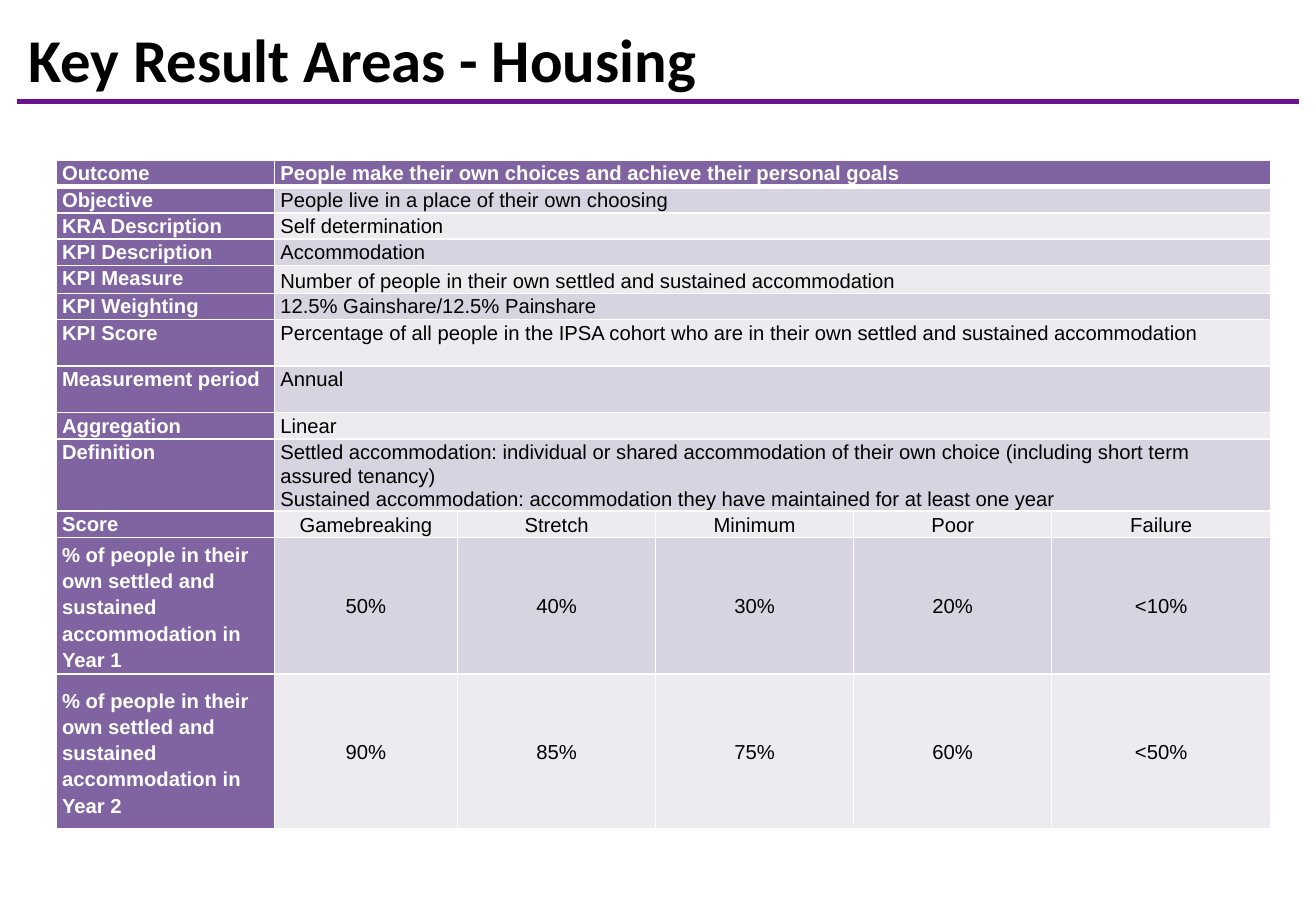
"""Build the Key Result Areas slide for housing."""
from lxml.etree import SubElement
from pptx import Presentation
from pptx.dml.color import RGBColor
from pptx.enum.shapes import MSO_CONNECTOR
from pptx.enum.text import MSO_ANCHOR, MSO_AUTO_SIZE, PP_ALIGN
from pptx.oxml.ns import qn
from pptx.util import Pt

TITLE = "Key Result Areas - Housing"
DETAILS = [
    ("Outcome", ["People make their own choices and achieve their personal goals"], 15.6),
    ("Objective", ["People live in a place of their own choosing"], 15.6),
    ("KRA Description", ["Self determination"], 15.6),
    ("KPI Description", ["Accommodation"], 15.6),
    ("KPI Measure", ["Number of people in their own settled and sustained accommodation"], 16.5),
    ("KPI Weighting", ["12.5% Gainshare/12.5% Painshare"], 15.6),
    ("KPI Score", ["Percentage of all people in the IPSA cohort who are in their own "
                   "settled and sustained accommodation"], 27.6),
    ("Measurement period", ["Annual"], 27.6),
    ("Aggregation", ["Linear"], 15.6),
    ("Definition", ["Settled accommodation: individual or shared accommodation of their own "
                    "choice (including short term assured tenancy)",
                    "Sustained accommodation: accommodation they have maintained for at "
                    "least one year"], 42.6),
]
SCORES = [
    ("Score", ["Gamebreaking", "Stretch", "Minimum", "Poor", "Failure"], 15.6),
    ("% of people in their own settled and sustained accommodation in Year 1",
     ["50%", "40%", "30%", "20%", "<10%"], 81),
    ("% of people in their own settled and sustained accommodation in Year 2",
     ["90%", "85%", "75%", "60%", "<50%"], 92),
]
LEFT_ALIGNED = ("KPI Score", "KPI Measure", "Definition")
COLUMN_WIDTHS = [129.4, 108.7, 117.4, 117.4, 117.4, 129.7]
COLORS = {"header": "8064A2", "dark band": "D8D3E0", "light band": "EDEAF0",
          "rule": "6C138F", "white": "FFFFFF", "black": "000000"}


def color(name):
    return RGBColor.from_string(COLORS[name])


def write(frame, lines, size=12, font="Arial", tint="black", bold=False,
          align=PP_ALIGN.LEFT, spacing=None, after=None):
    for index, line in enumerate(lines):
        para = frame.add_paragraph() if index else frame.paragraphs[0]
        para.alignment = align
        para.line_spacing = spacing
        para.space_after = after
        span = para.add_run()
        span.text = line
        span.font.size = Pt(size)
        span.font.name = font
        span.font.bold = bold
        span.font.color.rgb = color(tint)


def style_cell(cell, fill, row):
    cell.margin_left = cell.margin_right = Pt(3.6)
    cell.margin_top, cell.margin_bottom = Pt(0.7), Pt(0)
    properties = cell._tc.get_or_add_tcPr()
    thick_edges = {0: "lnB", 1: "lnT"}
    for edge in ("lnL", "lnR", "lnT", "lnB"):
        width = 3 if thick_edges.get(row) == edge else 1
        border = SubElement(properties, qn(f"a:{edge}"), w=str(Pt(width)))
        solid = SubElement(border, qn("a:solidFill"))
        SubElement(solid, qn("a:srgbClr"), val=COLORS["white"])
    cell.fill.solid()
    cell.fill.fore_color.rgb = color(fill)


def add_title(page):
    box = page.shapes.add_textbox(Pt(10), Pt(9.4), Pt(641), Pt(51))
    box.text_frame.word_wrap = True
    box.text_frame.auto_size = MSO_AUTO_SIZE.SHAPE_TO_FIT_TEXT
    write(box.text_frame, [TITLE], size=36, font="Calibri", bold=True)
    rule = page.shapes.add_connector(MSO_CONNECTOR.STRAIGHT, Pt(10), Pt(60), Pt(770), Pt(60))
    rule.line.color.rgb = color("rule")
    rule.line.width = Pt(3)
    SubElement(rule._element.spPr, qn("a:effectLst"))


def add_score_table(page):
    rows = DETAILS + SCORES
    table = page.shapes.add_table(len(rows), len(COLUMN_WIDTHS), Pt(33.2), Pt(95),
                                  Pt(sum(COLUMN_WIDTHS)),
                                  Pt(sum(height for _, _, height in rows))).table
    table.first_row = table.horz_banding = False
    for column, width in zip(table.columns, COLUMN_WIDTHS):
        column.width = Pt(width)
    for row, (label, values, height) in enumerate(rows):
        table.rows[row].height = Pt(height)
        band = "dark band" if row % 2 else "light band"
        for column, cell in enumerate(table.rows[row].cells):
            style_cell(cell, "header" if row == 0 or column == 0 else band, row)

        heading = table.cell(row, 0)
        if label.startswith("%"):
            heading.vertical_anchor = MSO_ANCHOR.MIDDLE
            layout = {"spacing": 1.15, "after": Pt(6)}
        else:
            layout = {"spacing": Pt(14), "align": PP_ALIGN.JUSTIFY}
        write(heading.text_frame, [label], tint="white", bold=True, **layout)

        if row < len(DETAILS):
            detail = table.cell(row, 1)
            detail.merge(table.cell(row, len(COLUMN_WIDTHS) - 1))
            if label == "Definition":
                detail.vertical_anchor = MSO_ANCHOR.MIDDLE
            write(detail.text_frame, values, bold=row == 0,
                  tint="black" if row else "white",
                  align=PP_ALIGN.LEFT if label in LEFT_ALIGNED else PP_ALIGN.JUSTIFY,
                  spacing=1.15 if label == "KPI Measure" else Pt(14))
        else:
            for column, value in enumerate(values, start=1):
                score = table.cell(row, column)
                score.vertical_anchor = MSO_ANCHOR.MIDDLE
                write(score.text_frame, [value], align=PP_ALIGN.CENTER, spacing=Pt(14))


def main():
    deck = Presentation()
    deck.slide_width, deck.slide_height = Pt(780), Pt(540)
    page = deck.slides.add_slide(deck.slide_layouts[6])
    add_score_table(page)
    add_title(page)
    deck.save("out.pptx")


if __name__ == "__main__":
    main()
